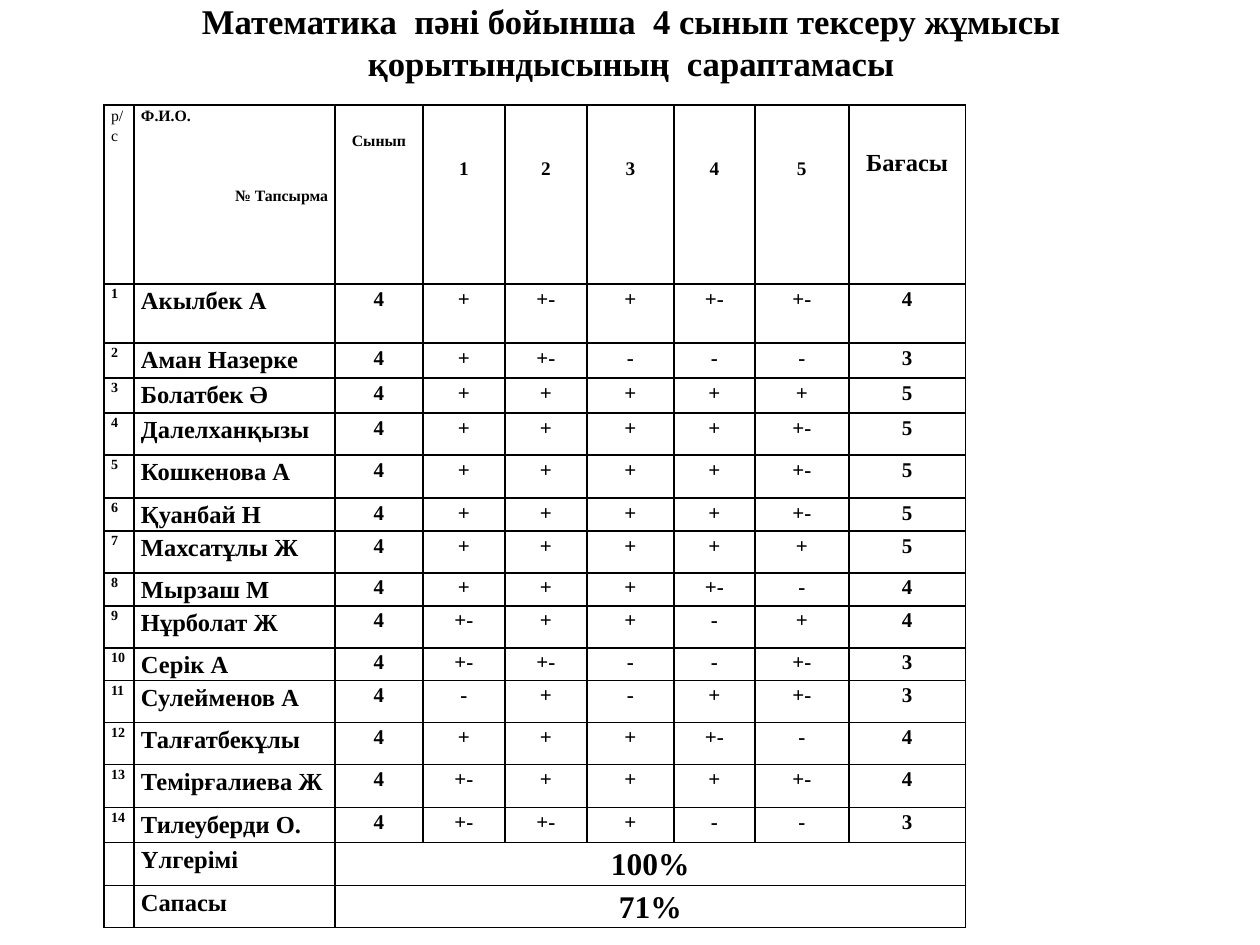
from lxml import etree
from pptx import Presentation
from pptx.dml.color import RGBColor
from pptx.enum.text import MSO_ANCHOR, PP_ALIGN
from pptx.oxml.ns import qn
from pptx.util import Emu, Pt

LEFT, CENTER, RIGHT = PP_ALIGN.LEFT, PP_ALIGN.CENTER, PP_ALIGN.RIGHT
TOP = MSO_ANCHOR.TOP

FONT = "Times New Roman"
BLACK = "000000"
EMU_PER_PX = 914400 / 126

TITLE_LINES = ["Математика  пәні бойынша  4 сынып тексеру жұмысы",
               "қорытындысының  сараптамасы"]
COLUMN_WIDTHS = [30, 201, 88, 82, 82, 87, 81, 94, 117]
ROW_HEIGHTS = [179, 59, 35, 35, 42, 43, 33, 42, 33, 42, 33, 42, 42, 43, 35, 43, 42]
GRADE_CLASS = "4"
PUPILS = [  # name, marks for tasks 1-5, final grade
    ("Акылбек А", "+ +- + +- +-", "4"),
    ("Аман Назерке", "+ +- - - -", "3"),
    ("Болатбек Ә", "+ + + + +", "5"),
    ("Далелханқызы", "+ + + + +-", "5"),
    ("Кошкенова А", "+ + + + +-", "5"),
    ("Қуанбай Н", "+ + + + +-", "5"),
    ("Махсатұлы Ж", "+ + + + +", "5"),
    ("Мырзаш М", "+ + + +- -", "4"),
    ("Нұрболат Ж", "+- + + - +", "4"),
    ("Серік А", "+- +- - - +-", "3"),
    ("Сулейменов А", "- + - + +-", "3"),
    ("Талғатбекұлы", "+ + + +- -", "4"),
    ("Темірғалиева Ж", "+- + + + +-", "4"),
    ("Тилеуберди О.", "+- +- + - -", "3"),
]
TOTALS = [("Үлгерімі", "100%"), ("Сапасы", "71%")]


def px(length):
    return Emu(round(length * EMU_PER_PX))


def color(hex_value):
    return RGBColor.from_string(hex_value)


def add_run(paragraph, text, size, bold=True):
    run = paragraph.add_run()
    run.text = text
    run.font.name = FONT
    run.font.size = Pt(size)
    run.font.bold = bold
    run.font.color.rgb = color(BLACK)


def add_title(slide):
    title = slide.shapes.title
    title.left, title.top, title.width, title.height = px(64), px(0), px(1134), px(157)
    frame = title.text_frame
    frame.word_wrap = True
    frame.vertical_anchor = TOP
    frame.margin_top = frame.margin_bottom = 0
    paragraph = frame.paragraphs[0]
    paragraph.alignment = CENTER
    paragraph.line_spacing = 1.0
    paragraph.space_before = Pt(0)
    for index, line in enumerate(TITLE_LINES):
        if index:
            paragraph.add_line_break()
        add_run(paragraph, line, 19.8)


def format_cell(cell):
    """Give the cell thin black borders, no fill and narrow margins."""
    properties = cell._tc.get_or_add_tcPr()
    for side in ("lnL", "lnR", "lnT", "lnB"):
        border = etree.SubElement(properties, qn(f"a:{side}"), w=str(Pt(1)))
        fill = etree.SubElement(border, qn("a:solidFill"))
        etree.SubElement(fill, qn("a:srgbClr"), val=BLACK)
    cell.fill.background()
    cell.margin_left = cell.margin_right = px(7)
    cell.margin_top = cell.margin_bottom = 0


def write_cell(cell, text, size, align=CENTER, bold=True, drop=0):
    """Write the first paragraph, lowered by drop px from the cell top."""
    cell.margin_top = px(drop)
    paragraph = cell.text_frame.paragraphs[0]
    paragraph.alignment = align
    paragraph.line_spacing = 1.15
    add_run(paragraph, text, size, bold)


def fill_header(table):
    write_cell(table.cell(0, 0), "р/с", 9, LEFT, bold=False)
    name_cell = table.cell(0, 1)
    write_cell(name_cell, "Ф.И.О.", 9, LEFT)
    task_label = name_cell.text_frame.add_paragraph()
    task_label.alignment = RIGHT
    task_label.line_spacing = 1.15
    task_label.space_before = Pt(34)
    add_run(task_label, "№ Тапсырма", 9)
    write_cell(table.cell(0, 2), "Сынып", 9, drop=25)
    for task in range(1, 6):
        write_cell(table.cell(0, task + 2), str(task), 11, drop=50)
    write_cell(table.cell(0, 8), "Бағасы", 14, drop=41)


def fill_pupils(table):
    for number, (name, marks, grade) in enumerate(PUPILS, start=1):
        write_cell(table.cell(number, 0), str(number), 8, LEFT)
        write_cell(table.cell(number, 1), name, 14, LEFT)
        for column, value in enumerate([GRADE_CLASS, *marks.split(), grade], start=2):
            write_cell(table.cell(number, column), value, 12)


def fill_totals(table):
    for row, (label, share) in enumerate(TOTALS, start=len(PUPILS) + 1):
        write_cell(table.cell(row, 1), label, 14, LEFT)
        share_cell = table.cell(row, 2)
        share_cell.merge(table.cell(row, len(COLUMN_WIDTHS) - 1))
        write_cell(share_cell, share, 18)


def add_results_table(slide):
    table = slide.shapes.add_table(
        len(ROW_HEIGHTS), len(COLUMN_WIDTHS), px(104), px(105),
        px(sum(COLUMN_WIDTHS)), px(sum(ROW_HEIGHTS))).table
    table.first_row = table.horz_banding = False
    for column, width in zip(table.columns, COLUMN_WIDTHS):
        column.width = px(width)
    for row, height in zip(table.rows, ROW_HEIGHTS):
        row.height = px(height)
    for cell in table.iter_cells():
        format_cell(cell)
    fill_header(table)
    fill_pupils(table)
    fill_totals(table)


def main():
    presentation = Presentation()
    presentation.slide_width, presentation.slide_height = px(1260), px(945)
    slide = presentation.slides.add_slide(presentation.slide_layouts[5])
    add_title(slide)
    add_results_table(slide)
    presentation.save("out.pptx")


if __name__ == "__main__":
    main()
